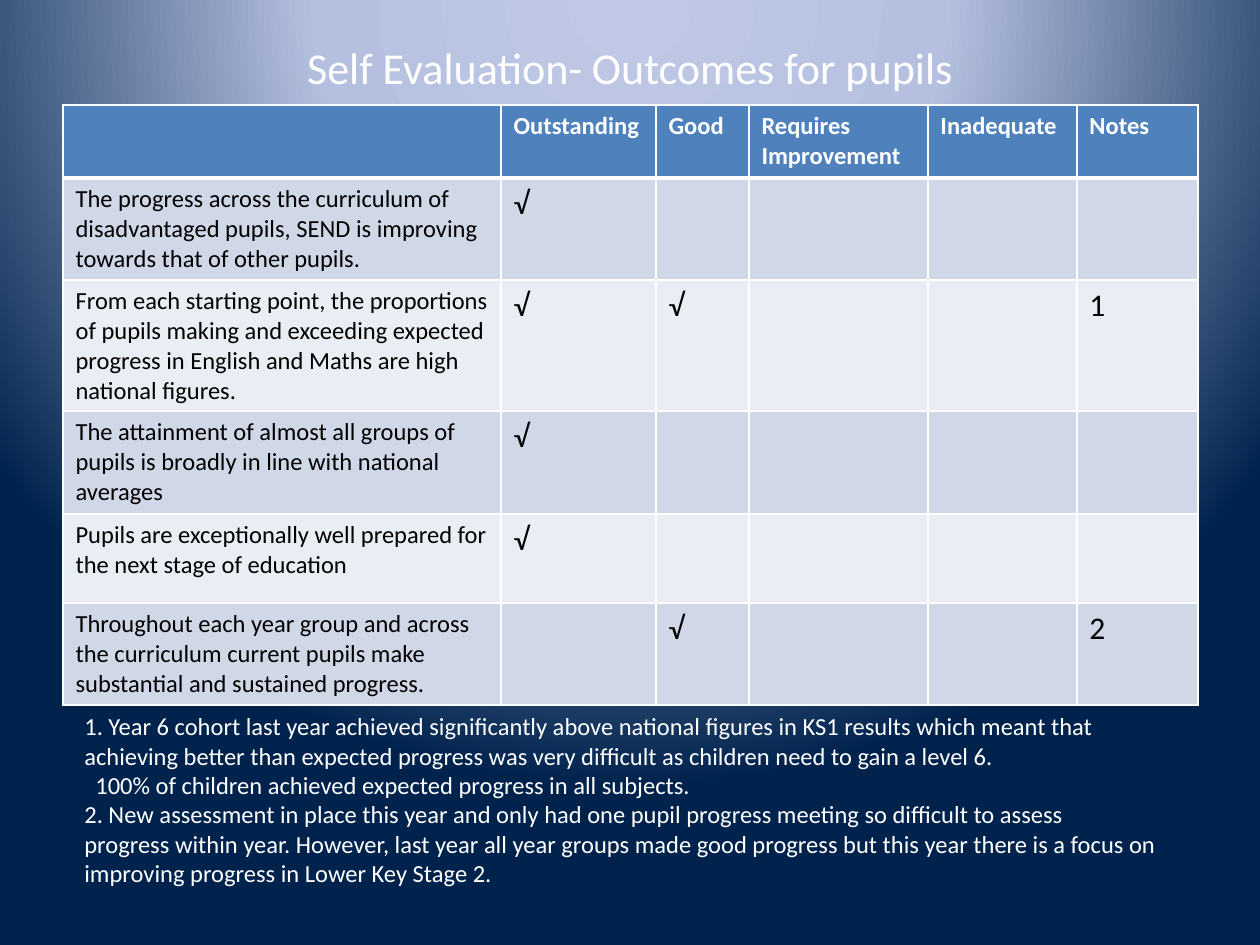
from lxml import etree
from pptx import Presentation
from pptx.dml.color import RGBColor
from pptx.enum.text import MSO_ANCHOR, PP_ALIGN
from pptx.oxml import parse_xml
from pptx.oxml.ns import nsdecls, qn
from pptx.util import Pt

SCALE = 914400 / 126
LEFT, CENTER = PP_ALIGN.LEFT, PP_ALIGN.CENTER
TOP, MIDDLE = MSO_ANCHOR.TOP, MSO_ANCHOR.MIDDLE
FONT = "Calibri"
HEX = {
    "white": "FFFFFF", "black": "000000", "head": "4F81BD",
    "odd": "D0D8E8", "even": "E9EDF4",
    "glow": "BFC9E5", "haze": "B5C0E0", "navy": "00234D",
}
STOPS = [(0, "glow"), (40, "haze"), (100, "navy")]
TITLE = "Self Evaluation- Outcomes for pupils"
COLS = [438, 155, 93, 179, 149, 121]
ROWS = [73, 102, 131, 103, 89, 102]
GRID = [
    ["", "Outstanding", "Good", "Requires Improvement", "Inadequate", "Notes"],
    ["The progress across the curriculum of disadvantaged pupils, SEND is "
     "improving towards that of other pupils.", "√", "", "", "", ""],
    ["From each starting point, the proportions of pupils making and exceeding "
     "expected progress in English and Maths are high national figures.",
     "√", "√", "", "", "1"],
    ["The attainment of almost all groups of pupils is broadly in line with "
     "national averages", "√", "", "", "", ""],
    ["Pupils are exceptionally well prepared for the next stage of education",
     "√", "", "", "", ""],
    ["Throughout each year group and across the curriculum current pupils make "
     "substantial and sustained progress.", "", "√", "", "", "2"],
]
NOTES = [
    ("1. Year 6 cohort last year achieved significantly above national figures "
     "in KS1 results which meant that achieving better than expected progress "
     "was very difficult as children need to gain a level 6.", 0),
    ("100% of children achieved expected progress in all subjects.", 11),
    ("2. New assessment in place this year and only had one pupil progress "
     "meeting so difficult to assess\vprogress within year. However, last year "
     "all year groups made good progress but this year there is a focus on "
     "improving progress in Lower Key Stage 2.", 0),
]


def px(n):
    return round(n * SCALE)


def write(para, text, size=14, color="white", bold=False, align=LEFT, indent=0):
    para.text = text
    para.alignment = align
    if indent:
        para._p.get_or_add_pPr().set("marL", str(px(indent)))
    for run in para.runs:
        font = run.font
        font.name, font.size, font.bold = FONT, Pt(size), bold
        font.color.rgb = RGBColor.from_string(HEX[color])


def frame(slide, box, anchor=TOP):
    body = slide.shapes.add_textbox(*map(px, box)).text_frame
    body.word_wrap = True
    body.vertical_anchor = anchor
    return body


def backdrop(slide):
    slide.background.fill.gradient()
    old = slide.element.find(".//" + qn("a:gradFill"))
    stops = "".join(
        f'<a:gs pos="{at * 1000}"><a:srgbClr val="{HEX[name]}"/></a:gs>'
        for at, name in STOPS)
    new = parse_xml(
        f'<a:gradFill {nsdecls("a")} rotWithShape="1"><a:gsLst>{stops}</a:gsLst>'
        '<a:path path="circle"><a:fillToRect l="50000" t="-80000" r="50000" '
        'b="180000"/></a:path></a:gradFill>')
    old.getparent().replace(old, new)


def title(slide, box):
    write(frame(slide, box, MIDDLE).paragraphs[0], TITLE, size=25.2, align=CENTER)


def edge(cell, row):
    wide = {"T": row == 1, "B": row == 0}
    for spot, side in enumerate("LRTB"):
        width = Pt(3 if wide.get(side) else 1)
        line = etree.Element(qn("a:ln" + side), w=str(width))
        fill = etree.SubElement(line, qn("a:solidFill"))
        etree.SubElement(fill, qn("a:srgbClr"), val=HEX["white"])
        cell._tc.get_or_add_tcPr().insert(spot, line)


def table(slide, box):
    grid = slide.shapes.add_table(len(ROWS), len(COLS), *map(px, box)).table
    for col, width in zip(grid.columns, COLS):
        col.width = px(width)
    for row, high in zip(grid.rows, ROWS):
        row.height = px(high)
    for r, line in enumerate(GRID):
        shade = "head" if r == 0 else "odd" if r % 2 else "even"
        for c, text in enumerate(line):
            cell = grid.cell(r, c)
            cell.fill.solid()
            cell.fill.fore_color.rgb = RGBColor.from_string(HEX[shade])
            edge(cell, r)
            if text:
                write(cell.text_frame.paragraphs[0], text,
                      size=18 if r and c else 14,
                      color="black" if r else "white", bold=r == 0)


def notes(slide, box):
    body = frame(slide, box)
    for i, (text, indent) in enumerate(NOTES):
        para = body.add_paragraph() if i else body.paragraphs[0]
        write(para, text, indent=indent)


def main():
    deck = Presentation()
    deck.slide_width, deck.slide_height = px(1260), px(945)
    slide = deck.slides.add_slide(deck.slide_layouts[6])
    backdrop(slide)
    title(slide, (63, 38, 1134, 58))
    table(slide, (63, 105, sum(COLS), sum(ROWS)))
    notes(slide, (72, 705, 1121, 190))
    deck.save("out.pptx")


if __name__ == "__main__":
    main()
